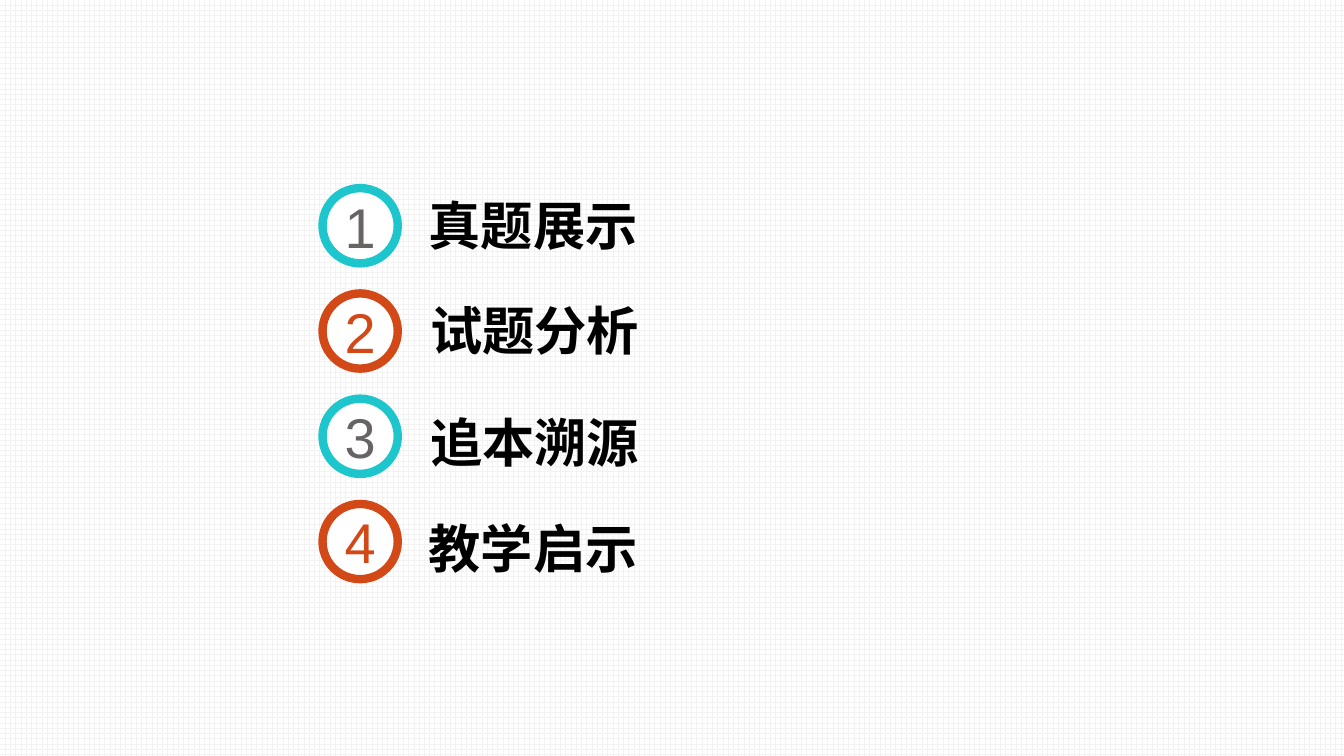
import pptx
import pptx.dml.color
import pptx.enum.dml
import pptx.enum.shapes
import pptx.enum.text
import pptx.oxml.ns
import pptx.util
from lxml import etree
from pptx.util import Inches

# Content: label, label left, label top, label width
ITEMS = [
    ("真题展示", 3.19, 1.44, 2.41),
    ("试题分析", 3.2, 2.22, 2.1),
    ("追本溯源", 3.2, 3.05, 2.1),
    ("教学启示", 3.19, 3.84, 2.1),
]
COLORS = {"teal": "1DC5CD", "orange": "D34817", "gray": "696464",
          "black": "000000", "white": "FFFFFF", "grid": "F2F2F2"}
# Ring and number colours, alternating by row
STYLES = [("teal", "gray"), ("orange", "orange")]
LEFT, FIRST_TOP, LAST_TOP, SIZE = 2.4, 1.4, 3.75, 0.56
PITCH = (LAST_TOP - FIRST_TOP) / (len(ITEMS) - 1)
LABEL_HEIGHT = 0.47


def rgb(name):
    return pptx.dml.color.RGBColor.from_string(COLORS[name])


def set_text(sp, text, size, font, color, align, bold=False):
    tf = sp.text_frame
    tf.margin_left = tf.margin_right = tf.margin_top = tf.margin_bottom = 0
    tf.vertical_anchor = pptx.enum.text.MSO_ANCHOR.MIDDLE
    tf.word_wrap = True
    tf.text = text
    p = tf.paragraphs[0]
    p.alignment = align
    r = p.runs[0]
    r.font.size = pptx.util.Pt(size)
    r.font.name = font
    r.font.bold = bold
    r.font.color.rgb = rgb(color)
    # East Asian typeface
    ea = etree.SubElement(r.font._element, pptx.oxml.ns.qn("a:ea"))
    ea.set("typeface", font)


def add_number(s, number, top, ring, color):
    sp = s.shapes.add_shape(pptx.enum.shapes.MSO_SHAPE.OVAL, Inches(LEFT),
                            Inches(top), Inches(SIZE), Inches(SIZE))
    sp.shadow.inherit = False
    sp.fill.solid()
    sp.fill.fore_color.rgb = rgb("white")
    sp.line.color.rgb = rgb(ring)
    sp.line.width = pptx.util.Pt(4.5)
    set_text(sp, str(number), 30, "Arial", color,
             pptx.enum.text.PP_ALIGN.CENTER)


def add_label(s, text, left, top, width):
    sp = s.shapes.add_textbox(Inches(left), Inches(top), Inches(width),
                              Inches(LABEL_HEIGHT))
    set_text(sp, text, 28, "Noto Sans CJK SC", "black",
             pptx.enum.text.PP_ALIGN.LEFT, bold=True)
    sp.text_frame.auto_size = pptx.enum.text.MSO_AUTO_SIZE.SHAPE_TO_FIT_TEXT


def main():
    prs = pptx.Presentation()
    prs.slide_width = Inches(10)
    prs.slide_height = prs.slide_width * 9 // 16
    s = prs.slides.add_slide(prs.slide_layouts[6])

    # Grid background
    fill = s.background.fill
    fill.patterned()
    fill.pattern = pptx.enum.dml.MSO_PATTERN.LARGE_GRID
    fill.fore_color.rgb = rgb("grid")
    fill.back_color.rgb = rgb("white")

    # Numbered agenda
    for i, item in enumerate(ITEMS):
        add_number(s, i + 1, FIRST_TOP + i * PITCH, *STYLES[i % 2])
        add_label(s, *item)

    prs.save("out.pptx")


if __name__ == "__main__":
    main()
